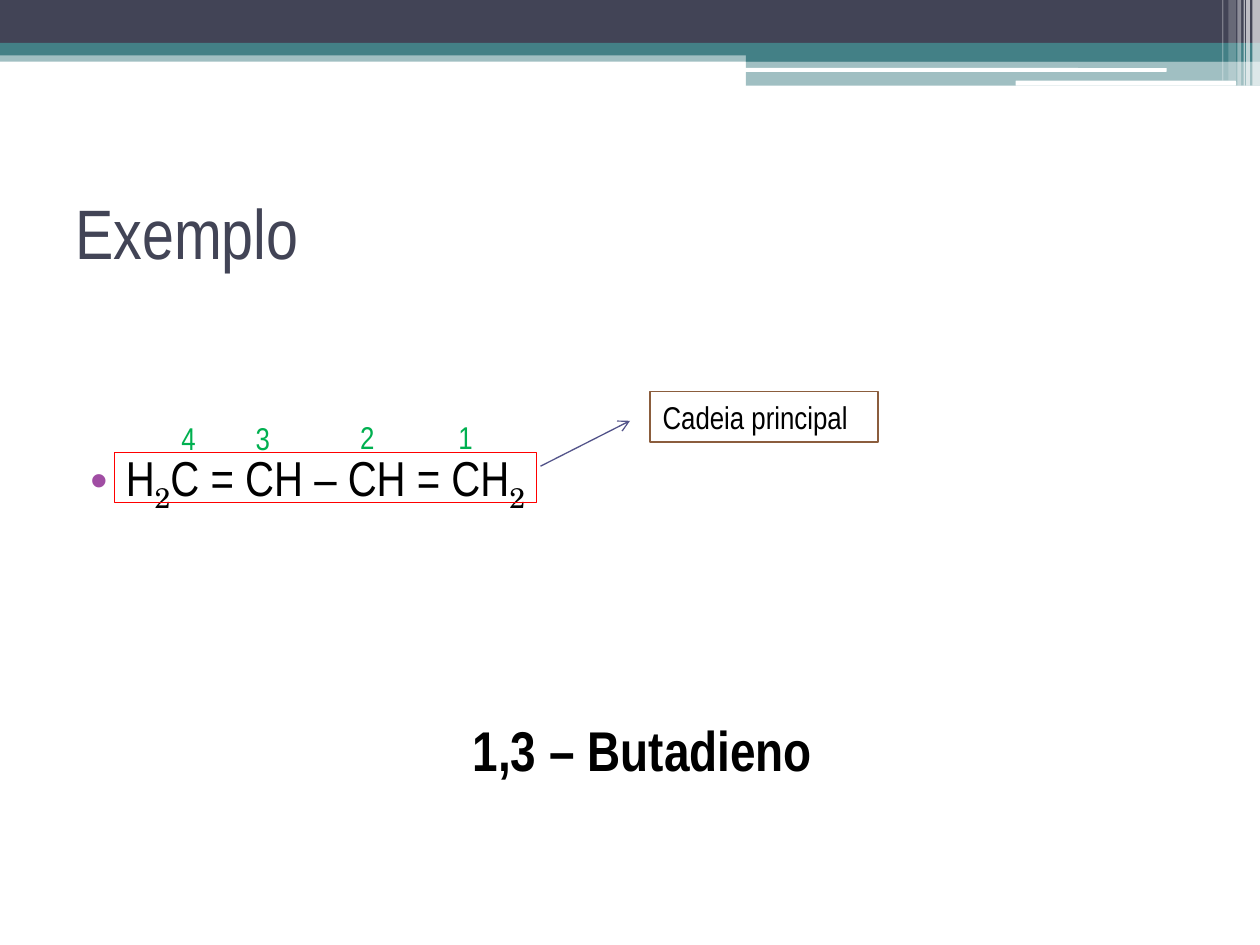
import pptx
import pptx.dml.color
import pptx.enum.shapes
import pptx.enum.text
import pptx.oxml.ns
import pptx.util
from lxml import etree

Inches = pptx.util.Inches
Pt = pptx.util.Pt
qn = pptx.oxml.ns.qn
SHAPE = pptx.enum.shapes.MSO_SHAPE
ALIGN = pptx.enum.text.PP_ALIGN
ANCHOR = pptx.enum.text.MSO_ANCHOR

COLORS = {
    "navy": "424456", "teal": "438086", "white": "FFFFFF", "black": "000000",
    "bullet": "A04DA3", "red": "FF0000", "arrow": "53548A",
    "brown": "8B5D3D", "green": "00B050",
}
FONT = "Arial Narrow"
SUB_FONT = "TeX Gyre Schola"


def rgb(name):
    return pptx.dml.color.RGBColor.from_string(COLORS[name])


def add_box(s, at, fill=None, alpha=100, line=None, kind=SHAPE.RECTANGLE):
    sp = s.shapes.add_shape(kind, *map(Inches, at))
    sp.shadow.inherit = False
    if fill:
        sp.fill.solid()
        sp.fill.fore_color.rgb = rgb(fill)
        if alpha < 100:
            clr = sp.fill._xPr.find(".//" + qn("a:srgbClr"))
            etree.SubElement(clr, qn("a:alpha"), val=str(alpha * 1000))
    else:
        sp.fill.background()
    if line:
        sp.line.color.rgb = rgb(line)
        sp.line.width = Pt(0.75)
    else:
        sp.line.fill.background()
    return sp


def add_run(p, text, size=18, color="black", bold=False, font=FONT, base=0):
    r = p.add_run()
    r.text = text
    r.font.size = Pt(size)
    r.font.bold = bold
    r.font.name = font
    r.font.color.rgb = rgb(color)
    if base:
        r._r.get_or_add_rPr().set("baseline", str(base * 1000))


def set_text(sp, text, align=ALIGN.LEFT, anchor=ANCHOR.TOP, **fmt):
    tf = sp.text_frame
    tf.word_wrap = True
    tf.vertical_anchor = anchor
    p = tf.paragraphs[0]
    p.alignment = align
    add_run(p, text, **fmt)


def add_text(s, at, text, **fmt):
    set_text(s.shapes.add_textbox(*map(Inches, at)), text, **fmt)


def add_formula(s, at, parts, size):
    tf = s.shapes.add_textbox(*map(Inches, at)).text_frame
    tf.word_wrap = True
    p = tf.paragraphs[0]
    pPr = p._p.get_or_add_pPr()
    pPr.set("marL", str(Inches(0.4)))
    pPr.set("indent", str(Inches(-0.28)))
    clr = etree.SubElement(pPr, qn("a:buClr"))
    etree.SubElement(clr, qn("a:srgbClr"), val=COLORS["bullet"])
    etree.SubElement(pPr, qn("a:buFont"), typeface="Arial")
    etree.SubElement(pPr, qn("a:buChar"), char="•")
    for part in parts:
        if part.isdigit():
            add_run(p, part, size=size, font=SUB_FONT, base=-25)
        else:
            add_run(p, part, size=size)


def add_arrow(s, start, end, color):
    cx = s.shapes.add_connector(pptx.enum.shapes.MSO_CONNECTOR.STRAIGHT,
                                *map(Inches, start + end))
    cx.line.color.rgb = rgb(color)
    cx.line.width = Pt(0.75)
    etree.SubElement(cx.line._get_or_add_ln(), qn("a:tailEnd"), type="arrow")
    etree.SubElement(cx._element.spPr, qn("a:effectLst"))


def add_header(s):
    # Horizontal bands
    for at, fill, alpha in [
        ((0, 0.4, 10, 0.09), "teal", 50),
        ((0, 0, 10, 0.34), "navy", 100),
        ((0, 0.34, 10, 0.1), "teal", 100),
        ((5.92, 0.39, 4.08, 0.1), "teal", 100),
        ((5.92, 0.48, 4.08, 0.2), "teal", 50),
    ]:
        add_box(s, at, fill, alpha)
    # White rounded bars
    for at in [(5.91, 0.54, 3.35, 0.03), (8.06, 0.64, 1.75, 0.04)]:
        add_box(s, at, "white", kind=SHAPE.ROUNDED_RECTANGLE)
    # Translucent vertical stripes
    for left, width, height, alpha in [
        (9.94, 0.06, 0.68, 65), (9.89, 0.03, 0.68, 65),
        (9.87, 0.01, 0.68, 60), (9.82, 0.03, 0.68, 40),
        (9.75, 0.06, 0.64, 20), (9.7, 0.01, 0.64, 30),
    ]:
        add_box(s, (left, 0, width, height), "white", alpha)


def main():
    prs = pptx.Presentation()
    prs.slide_width, prs.slide_height = Inches(10), Inches(7.5)
    s = prs.slides.add_slide(prs.slide_layouts[6])

    add_header(s)
    add_text(s, (0.5, 1.25, 9, 1.17), "Exemplo", size=40, color="navy",
             anchor=ANCHOR.MIDDLE)

    # Formula with its main chain framed
    add_formula(s, (0.5, 3.5, 9, 0.6),
                ["H", "2", "C = CH – CH = CH", "2"], size=28)
    add_box(s, (0.91, 3.59, 3.35, 0.4), line="red")

    # Label of the main chain
    add_arrow(s, (4.29, 3.7), (5, 3.34), "arrow")
    label = add_box(s, (5.16, 3.11, 1.81, 0.4), line="brown")
    set_text(label, "Cadeia principal")

    # Carbon numbers
    for number, left, top in [("1", 3.54, 3.27), ("2", 2.76, 3.27),
                              ("3", 1.93, 3.28), ("4", 1.34, 3.28)]:
        add_text(s, (left, top, 0.35, 0.4), number, color="green")

    # Name of the compound
    add_text(s, (3.23, 5.63, 3.74, 0.64), "1,3 – Butadieno", size=32,
             bold=True, align=ALIGN.CENTER)

    prs.save("out.pptx")


if __name__ == "__main__":
    main()
